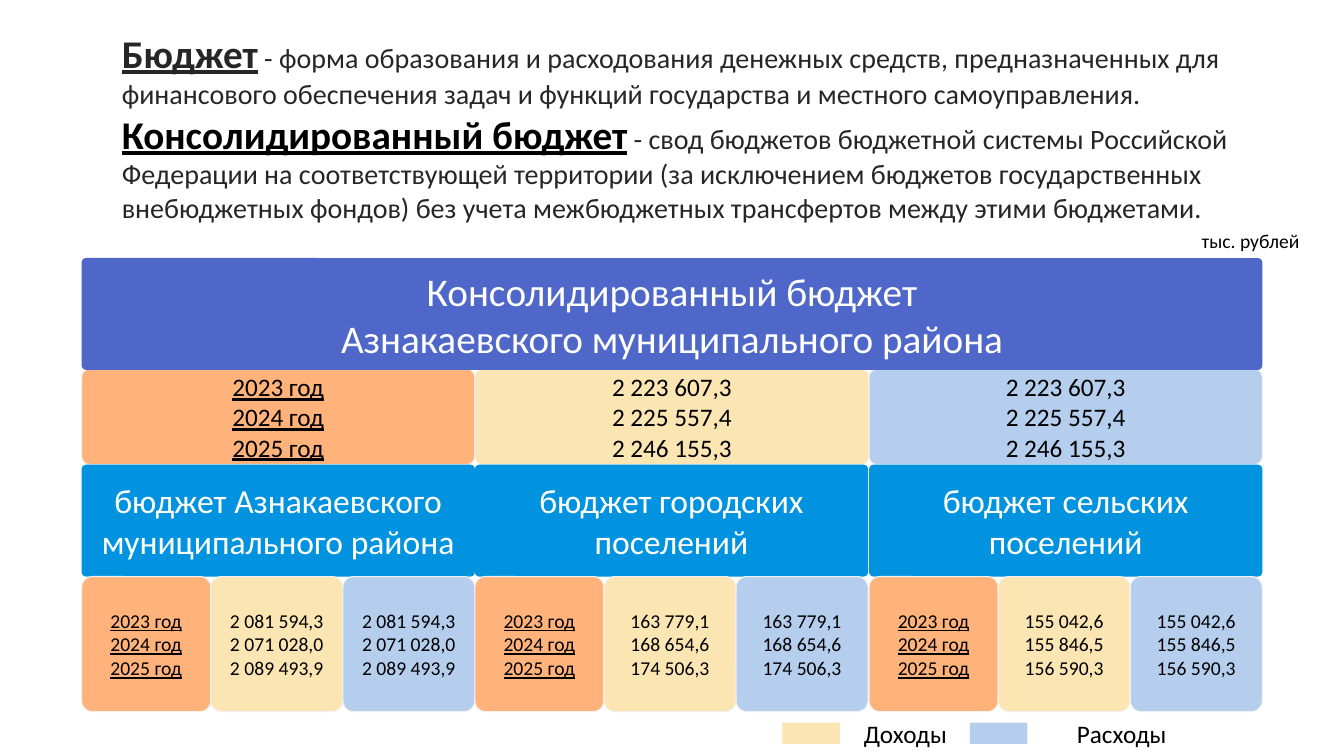
from pptx import Presentation
from pptx.dml.color import RGBColor
from pptx.enum.shapes import MSO_SHAPE
from pptx.enum.text import MSO_ANCHOR, MSO_AUTO_SIZE, PP_ALIGN
from pptx.util import Pt

PX = 9144  # EMU per px, 100 px to the inch

BLACK = RGBColor(0x00, 0x00, 0x00)
DARK = RGBColor(0x26, 0x26, 0x26)
WHITE = RGBColor(0xFF, 0xFF, 0xFF)
EDGE = RGBColor(0xF2, 0xF2, 0xF2)
INDIGO = RGBColor(0x4E, 0x67, 0xC8)
BLUE = RGBColor(0x02, 0x93, 0xE0)
YEAR = RGBColor(0xFF, 0xB3, 0x7A)
INCOME = RGBColor(0xFB, 0xE6, 0xB3)
EXPENSE = RGBColor(0xB5, 0xCE, 0xED)

YEARS = ["2023 год", "2024 год", "2025 год"]
TOTALS = ["2 223 607,3", "2 225 557,4", "2 246 155,3"]
BUDGETS = [
    ("бюджет Азнакаевского муниципального района",
     ["2 081 594,3", "2 071 028,0", "2 089 493,9"]),
    ("бюджет городских поселений",
     ["163 779,1", "168 654,6", "174 506,3"]),
    ("бюджет сельских поселений",
     ["155 042,6", "155 846,5", "156 590,3"]),
]
DEFINITIONS = [
    ("Бюджет", DARK,
     " - форма образования и расходования денежных средств, предназначенных для "
     "финансового обеспечения задач и функций государства и местного самоуправления."),
    ("Консолидированный бюджет", BLACK,
     " - свод бюджетов бюджетной системы Российской Федерации на соответствующей "
     "территории (за исключением бюджетов государственных внебюджетных фондов) без "
     "учета межбюджетных трансфертов между этими бюджетами."),
]


class Board:
    font = "Calibri"

    def __init__(self, slide):
        self.slide = slide

    def style(self, font, size, color, **flags):
        font.name, font.size = self.font, Pt(size)
        font.color.rgb = color
        for name, value in flags.items():
            setattr(font, name, value)

    def box(self, x, y, w, h, fill, lines=(), size=18, color=BLACK,
            underline=False, radius=0, edge=None):
        kind = MSO_SHAPE.ROUNDED_RECTANGLE if radius else MSO_SHAPE.RECTANGLE
        sp = self.slide.shapes.add_shape(kind, *(v * PX for v in (x, y, w, h)))
        sp.shadow.inherit = False
        if radius:
            sp.adjustments[0] = radius
        sp.fill.solid()
        sp.fill.fore_color.rgb = fill
        if edge is None:
            sp.line.fill.background()
        else:
            sp.line.color.rgb = edge
            sp.line.width = Pt(0.75)
        tf = sp.text_frame
        tf.word_wrap = True
        tf.vertical_anchor = MSO_ANCHOR.MIDDLE
        tf.margin_left = tf.margin_right = 5 * PX
        tf.margin_top = tf.margin_bottom = 0
        for i, line in enumerate(lines):
            p = tf.paragraphs[0] if i == 0 else tf.add_paragraph()
            p.text = line
            p.alignment = PP_ALIGN.CENTER
            self.style(p.font, size, color, underline=underline)

    def header(self, x, y, w, h, fill, lines, size):
        self.box(x, y, w, h, fill, lines, size, WHITE, radius=0.04)

    def figures(self, x, y, widths, h, amounts, size):
        """Years, income and expenses side by side."""
        columns = [(YEARS, YEAR), (amounts, INCOME), (amounts, EXPENSE)]
        for w, (lines, fill) in zip(widths, columns):
            self.box(x, y, w, h, fill, lines, size, underline=lines is YEARS,
                     radius=0.083, edge=EDGE)
            x += w

    def text(self, x, y, w, h, wrap=True):
        sp = self.slide.shapes.add_textbox(*(v * PX for v in (x, y, w, h)))
        tf = sp.text_frame
        tf.word_wrap = wrap
        tf.auto_size = MSO_AUTO_SIZE.SHAPE_TO_FIT_TEXT
        return tf


def main():
    prs = Presentation()
    prs.slide_width, prs.slide_height = 1333 * PX, 750 * PX
    s = prs.slides.add_slide(prs.slide_layouts[6])
    board = Board(s)

    # Definitions
    tf = board.text(111, 24, 1120, 212)
    for i, (term, color, meaning) in enumerate(DEFINITIONS):
        p = tf.paragraphs[0] if i == 0 else tf.add_paragraph()
        r = p.add_run()
        r.text = term
        board.style(r.font, 28, color, bold=True, underline=True)
        r = p.add_run()
        r.text = meaning
        board.style(r.font, 20, DARK)

    # Unit of measure
    p = board.text(1182, 222, 121, 34, wrap=False).paragraphs[0]
    p.text = "тыс. рублей"
    board.style(p.font, 14, BLACK)

    # Consolidated budget
    left, width = 81, 1171
    column = width // 3
    board.figures(left, 366, (390, 391, 390), 95, TOTALS, 18)
    board.header(left, 256, width, 111, INDIGO,
                 ["Консолидированный бюджет", "Азнакаевского муниципального района"], 28)

    # Budgets that make it up
    for i, (name, amounts) in enumerate(BUDGETS):
        x = left + round(i * width / 3)
        board.header(x, 461, column, 111, BLUE, [name], 24)
        board.figures(x, 572, (128, 131, 131), 134, amounts, 14)

    # Legend
    for x, fill, label, w in [(776, INCOME, "Доходы", 114), (962, EXPENSE, "Расходы", 171)]:
        board.box(x, 717, 57, 21, fill)
        board.box(x + 65, 717, w, 21, WHITE, [label])

    prs.save("out.pptx")


if __name__ == "__main__":
    main()
